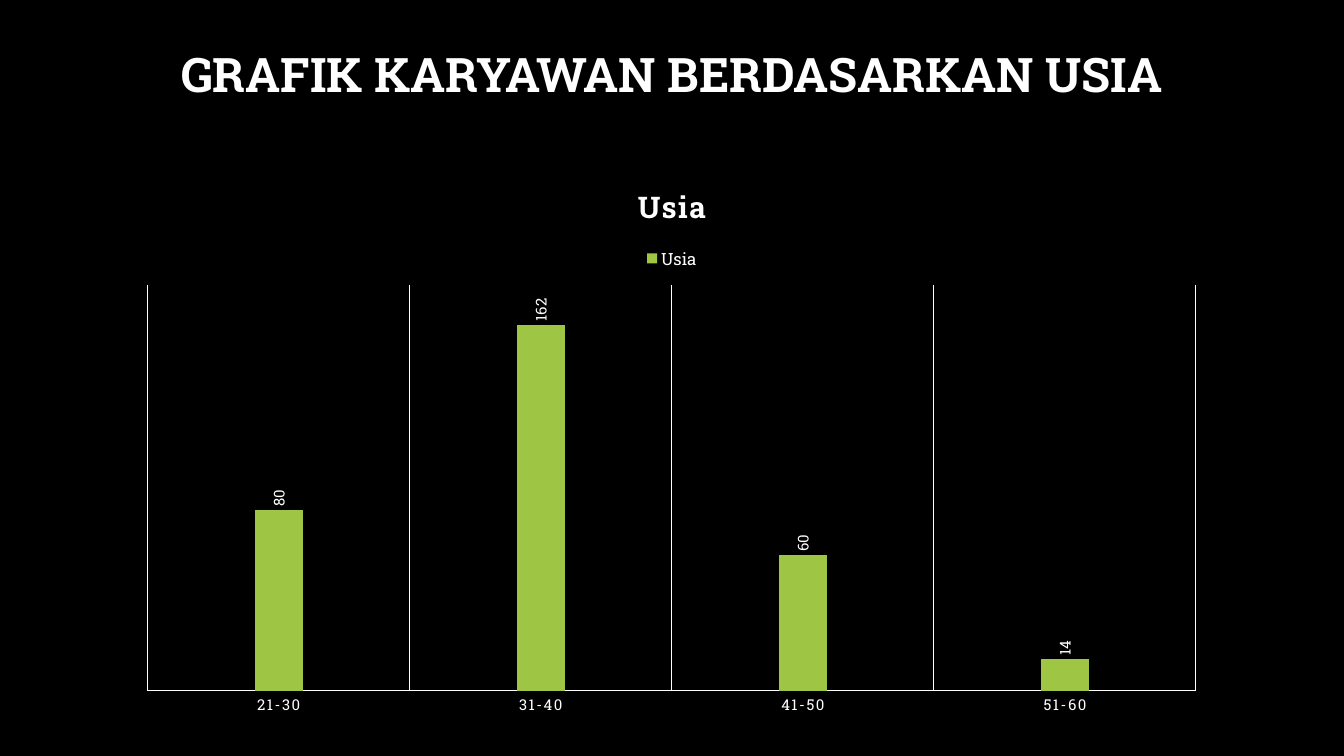
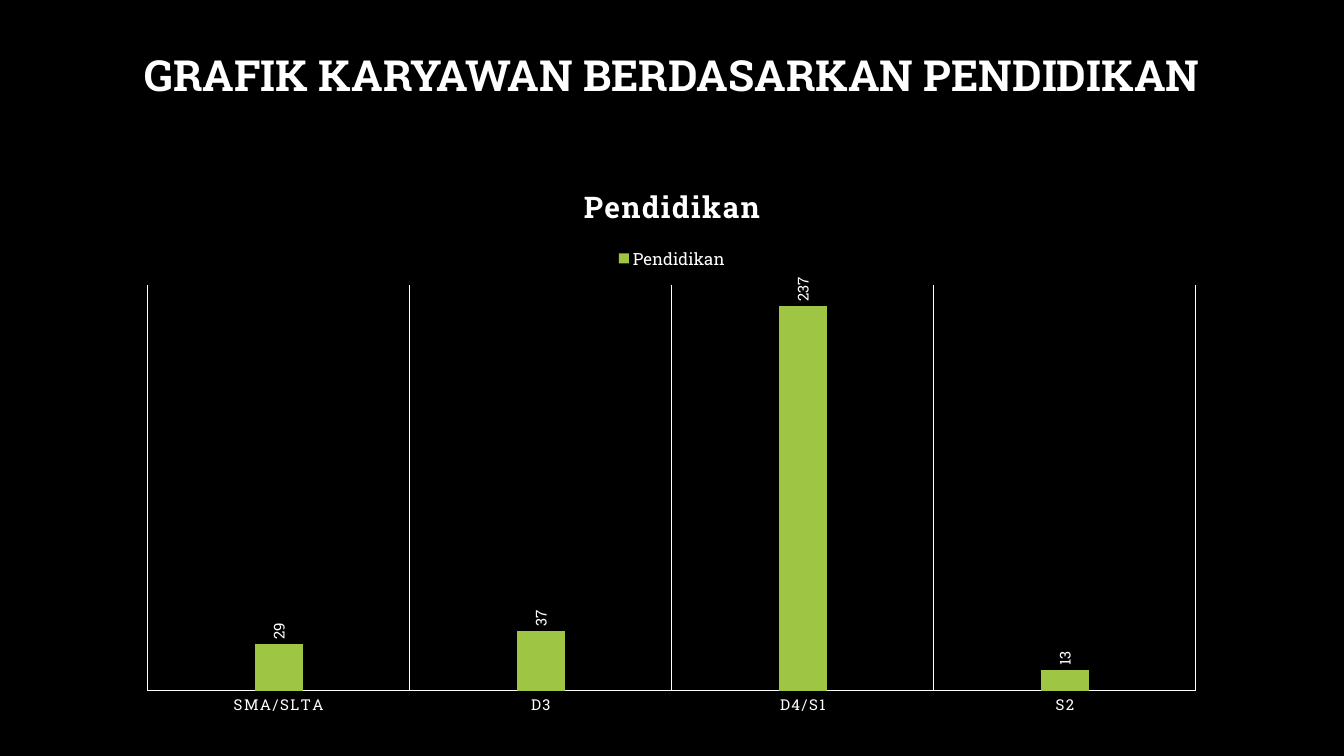
"""Build two slides that chart employees by age and by education."""
from dataclasses import dataclass

from pptx import Presentation
from pptx.chart.chart import Chart
from pptx.chart.data import CategoryChartData
from pptx.dml.color import RGBColor
from pptx.enum.chart import XL_CHART_TYPE as ChartType
from pptx.enum.chart import XL_LABEL_POSITION as LabelPosition
from pptx.enum.chart import XL_LEGEND_POSITION as LegendPosition
from pptx.enum.chart import XL_TICK_MARK as TickMark
from pptx.enum.text import MSO_ANCHOR as Anchor
from pptx.enum.text import PP_ALIGN as Align
from pptx.slide import Slide
from pptx.text.text import Font
from pptx.util import Pt

FONT = "Roboto Slab"
BLACK, WHITE, GREEN = "000000", "FFFFFF", "9EC544"
LEFT, WIDTH = 89.88, 780
LABEL_SIZE = 10.64
LETTER_SPACING = "120"
BLANK_LAYOUT = 6


@dataclass(frozen=True)
class ChartPage:
    title: str
    title_size: float
    series: str
    counts: dict[str, int]
    maximum: int


PAGES = (
    ChartPage("GRAFIK KARYAWAN BERDASARKAN USIA", 34, "Usia",
              {"21-30": 80, "31-40": 162, "41-50": 60, "51-60": 14}, 180),
    ChartPage("GRAFIK KARYAWAN BERDASARKAN PENDIDIKAN", 30.6, "Pendidikan",
              {"SMA/SLTA": 29, "D3": 37, "D4/S1": 237, "S2": 13}, 250),
)


def color(value: str) -> RGBColor:
    return RGBColor.from_string(value)


def style_font(font: Font, size: float, bold: bool = False) -> None:
    font.name = FONT
    font.size = Pt(size)
    font.bold = bold
    font.color.rgb = color(WHITE)


def add_title(slide: Slide, page: ChartPage) -> None:
    box = slide.shapes.add_textbox(Pt(LEFT), Pt(21.4), Pt(WIDTH), Pt(67.6))
    frame = box.text_frame
    frame.word_wrap = True
    frame.vertical_anchor = Anchor.MIDDLE
    frame.text = page.title
    para = frame.paragraphs[0]
    para.alignment = Align.CENTER
    para.line_spacing = 0.9
    style_font(para.runs[0].font, page.title_size, bold=True)


def style_heading(chart: Chart, text: str) -> None:
    chart.has_title = True
    chart.chart_title.include_in_layout = False
    frame = chart.chart_title.text_frame
    frame.text = text
    span = frame.paragraphs[0].runs[0]
    style_font(span.font, 21.28, bold=True)
    span._r.get_or_add_rPr().set("spc", LETTER_SPACING)


def style_legend(chart: Chart) -> None:
    chart.has_legend = True
    chart.legend.position = LegendPosition.TOP
    chart.legend.include_in_layout = False
    style_font(chart.legend.font, 11.97)


def style_axes(chart: Chart, maximum: int) -> None:
    categories, values = chart.category_axis, chart.value_axis
    categories.major_tick_mark = categories.minor_tick_mark = TickMark.NONE
    categories.has_major_gridlines = True
    for line in (categories.format.line, categories.major_gridlines.format.line):
        line.width = Pt(0.75)
        line.color.rgb = color(WHITE)
    style_font(categories.tick_labels.font, LABEL_SIZE)
    label_style = categories._element.xpath("c:txPr/a:p/a:pPr/a:defRPr")[0]
    label_style.set("spc", LETTER_SPACING)
    values.has_major_gridlines = False
    values.minimum_scale, values.maximum_scale = 0, maximum
    values.visible = False


def style_bars(chart: Chart) -> None:
    plot = chart.plots[0]
    plot.gap_width, plot.overlap = 444, -90
    plot.vary_by_categories = False
    series = plot.series[0]
    series.format.fill.solid()
    series.format.fill.fore_color.rgb = color(GREEN)
    labels = series.data_labels
    labels.show_value = True
    labels.position = LabelPosition.OUTSIDE_END
    style_font(labels.font, LABEL_SIZE)
    body = labels._element.xpath("c:txPr/a:bodyPr")[0]
    body.set("rot", "-5400000")
    body.set("vert", "horz")


def add_column_chart(slide: Slide, page: ChartPage) -> None:
    data = CategoryChartData()
    data.categories = list(page.counts)
    data.add_series(page.series, list(page.counts.values()))
    chart = slide.shapes.add_chart(ChartType.COLUMN_CLUSTERED, Pt(LEFT), Pt(116.2),
                                   Pt(WIDTH), Pt(402.5), data).chart
    style_font(chart.font, 10)
    style_heading(chart, page.series)
    style_legend(chart)
    style_axes(chart, page.maximum)
    style_bars(chart)


def main() -> None:
    deck = Presentation()
    deck.slide_width, deck.slide_height = Pt(960), Pt(540)
    for page in PAGES:
        slide = deck.slides.add_slide(deck.slide_layouts[BLANK_LAYOUT])
        slide.background.fill.solid()
        slide.background.fill.fore_color.rgb = color(BLACK)
        add_title(slide, page)
        add_column_chart(slide, page)
    deck.save("out.pptx")


if __name__ == "__main__":
    main()
